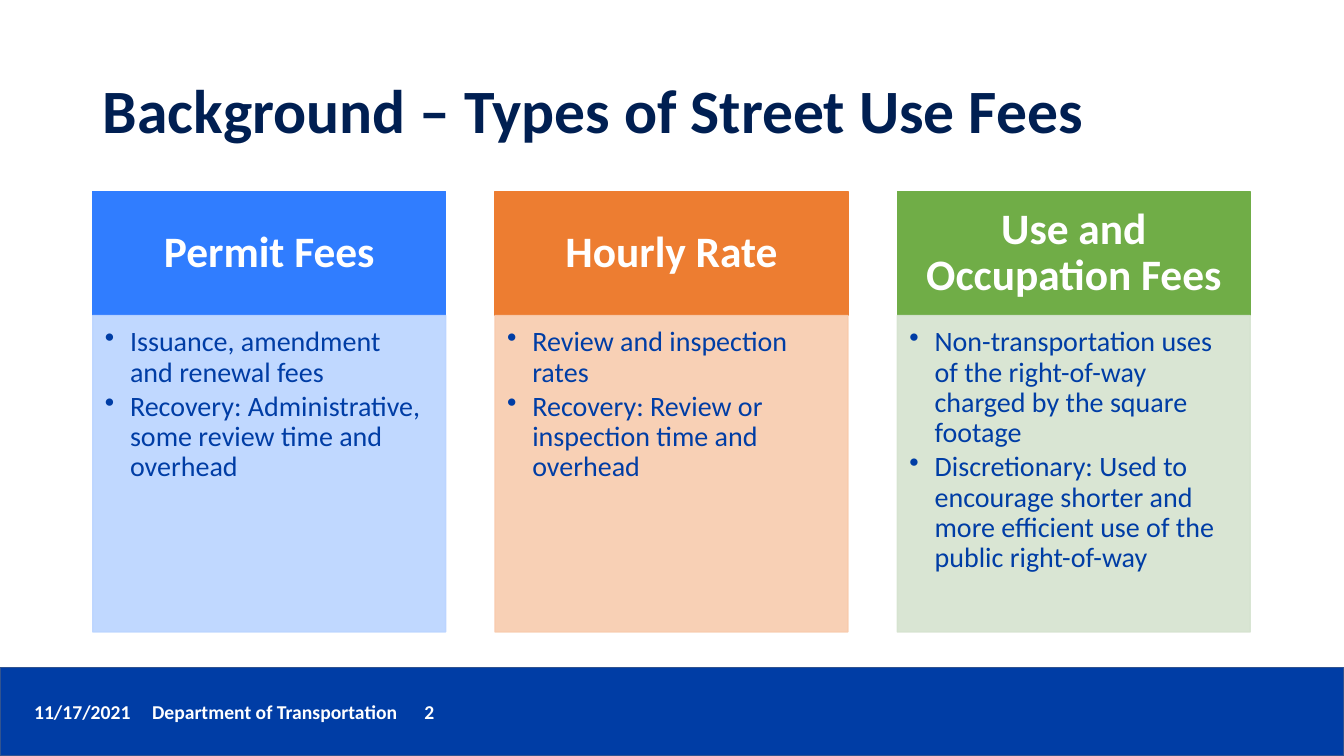
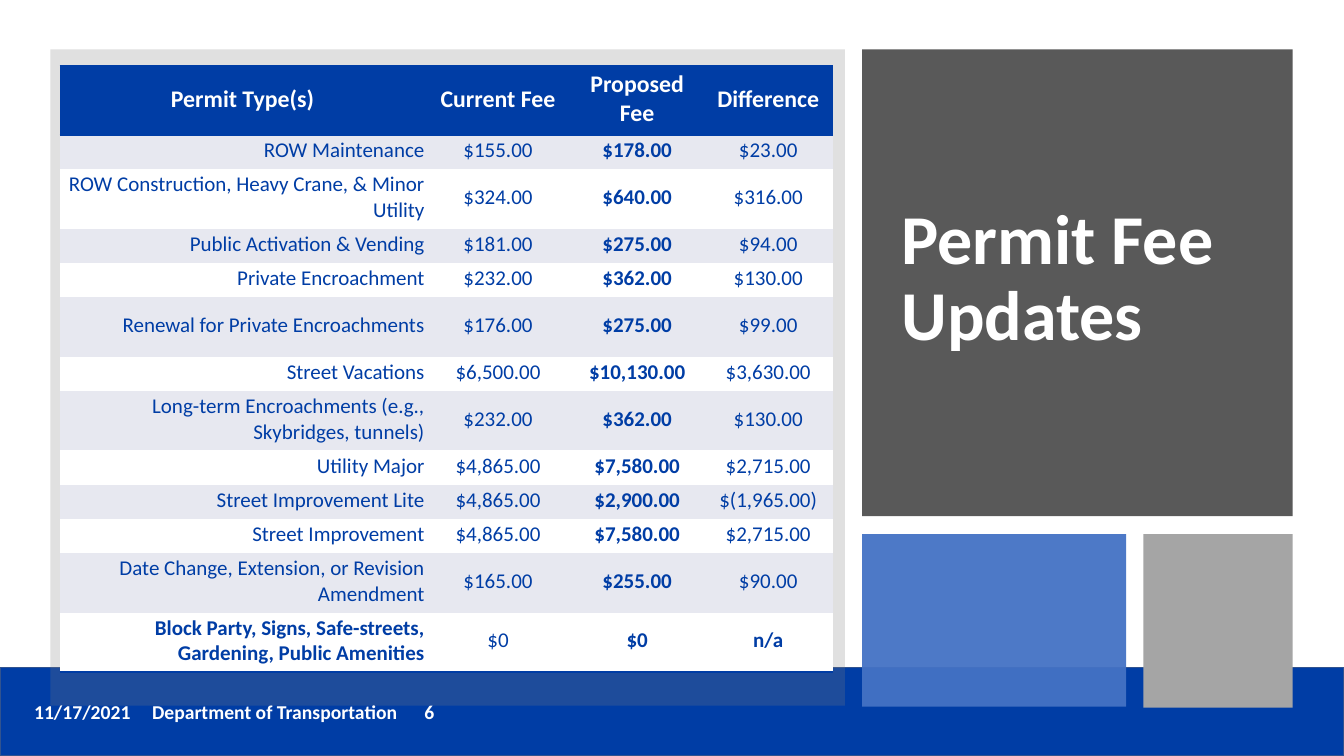
from dataclasses import dataclass
from typing import Optional, Sequence

from lxml.etree import SubElement
from pptx import Presentation
from pptx.dml.color import RGBColor
from pptx.enum.shapes import MSO_SHAPE as Preset
from pptx.enum.text import MSO_ANCHOR as Anchor, MSO_AUTO_SIZE as AutoSize, PP_ALIGN as Align
from pptx.oxml.ns import qn
from pptx.util import Inches, Pt

FONT = "Calibri"
COLORS = {
    "white": "FFFFFF",
    "navy": "001F52",
    "royal": "003DA5",
    "band_line": "31538F",
    "charcoal": "595959",
    "mid_gray": "7F7F7F",
    "light_gray": "A5A5A5",
    "soft_blue": "4472C4",
    "stripe": "E7E8F0",
}
SLIDE_WIDTH, SLIDE_HEIGHT = 13.33, 7.5
PLAIN_TABLE_STYLE = "{2D5ABB26-0587-4C30-8999-92F81FD0307C}"


@dataclass(frozen=True)
class Box:
    left: float
    top: float
    width: float
    height: float

    def lengths(self) -> list:
        return [Inches(v) for v in (self.left, self.top, self.width, self.height)]


@dataclass(frozen=True)
class FeeCard:
    heading: str
    bullets: Sequence[str]
    heading_color: str
    body_color: str


@dataclass(frozen=True)
class Panel:
    box: Box
    color: str
    opacity: int = 100


@dataclass(frozen=True)
class FeeRow:
    permit: str
    current: str
    proposed: str
    difference: str
    tall: bool = False
    emphasized: bool = False


CARDS = [
    FeeCard("Permit Fees",
            ["Issuance, amendment and renewal fees",
             "Recovery: Administrative, some review time and overhead"],
            "307DFF", "BAD4FF"),
    FeeCard("Hourly Rate",
            ["Review and inspection rates",
             "Recovery: Review or inspection time and overhead"],
            "ED7D31", "F8CBAD"),
    FeeCard("Use and Occupation Fees",
            ["Non-transportation uses of the right-of-way charged by the square footage",
             "Discretionary: Used to encourage shorter and more efficient use of the "
             "public right-of-way"],
            "70AD47", "D5E3CF"),
]

PANELS = [
    Panel(Box(0.5, 0.49, 7.88, 6.51), COLORS["mid_gray"], 24),
    Panel(Box(8.55, 0.49, 4.27, 4.63), COLORS["charcoal"]),
    Panel(Box(8.55, 5.3, 2.62, 1.71), COLORS["soft_blue"], 95),
    Panel(Box(11.34, 5.3, 1.48, 1.72), COLORS["light_gray"]),
]

FEE_HEADERS = ["Permit Type(s)", "Current Fee", "Proposed Fee", "Difference"]
FEE_COLUMNS = [3.63, 1.44, 1.32, 1.28]
HEADER_HEIGHT, ROW_HEIGHT, TALL_ROW_HEIGHT = 0.68, 0.34, 0.59
FEE_ROWS = [
    FeeRow("ROW Maintenance", "$155.00", "$178.00", "$23.00"),
    FeeRow("ROW Construction, Heavy Crane, & Minor Utility",
           "$324.00", "$640.00", "$316.00", tall=True),
    FeeRow("Public Activation & Vending", "$181.00", "$275.00", "$94.00"),
    FeeRow("Private Encroachment", "$232.00", "$362.00", "$130.00"),
    FeeRow("Renewal for Private Encroachments", "$176.00", "$275.00", "$99.00", tall=True),
    FeeRow("Street Vacations", "$6,500.00", "$10,130.00", "$3,630.00"),
    FeeRow("Long-term Encroachments (e.g., Skybridges, tunnels)",
           "$232.00", "$362.00", "$130.00", tall=True),
    FeeRow("Utility Major", "$4,865.00", "$7,580.00", "$2,715.00"),
    FeeRow("Street Improvement Lite", "$4,865.00", "$2,900.00", "$(1,965.00)"),
    FeeRow("Street Improvement", "$4,865.00", "$7,580.00", "$2,715.00"),
    FeeRow("Date Change, Extension, or Revision Amendment",
           "$165.00", "$255.00", "$90.00", tall=True),
    FeeRow("Block Party, Signs, Safe-streets, Gardening, Public Amenities",
           "$0", "$0", "n/a", tall=True, emphasized=True),
]


# Shared helpers
def write_text(frame, *texts: str, size: float, color: str, bold: bool = False,
               align=Align.LEFT, anchor=None, margins: Optional[Sequence[float]] = None,
               line_spacing: float = 1.0, space_after: float = 0,
               bullet_indent: float = 0, tabs: Sequence[float] = ()) -> None:
    """Write one paragraph per text; margins run left, top, right, bottom."""
    frame.word_wrap = True
    if anchor is not None:
        frame.vertical_anchor = anchor
    if margins:
        (frame.margin_left, frame.margin_top,
         frame.margin_right, frame.margin_bottom) = map(Inches, margins)
    for index, text in enumerate(texts):
        paragraph = frame.add_paragraph() if index else frame.paragraphs[0]
        properties = paragraph._p.get_or_add_pPr()
        if bullet_indent:
            properties.set("marL", str(Inches(bullet_indent)))
            properties.set("indent", str(-Inches(bullet_indent)))
            SubElement(properties, qn("a:buChar")).set("char", "•")
        if tabs:
            tab_list = SubElement(properties, qn("a:tabLst"))
            for position in tabs:
                tab = SubElement(tab_list, qn("a:tab"))
                tab.set("pos", str(Inches(position)))
                tab.set("algn", "l")
        paragraph.alignment = align
        paragraph.line_spacing = line_spacing
        paragraph.space_before = Pt(0)
        paragraph.space_after = Pt(space_after)
        run = paragraph.add_run()
        run.text = text
        run.font.name = FONT
        run.font.size = Pt(size)
        run.font.bold = bold
        run.font.color.rgb = RGBColor.from_string(color)


def add_rectangle(slide, box: Box, fill: str, line: Optional[str] = None, opacity: int = 100):
    shape = slide.shapes.add_shape(Preset.RECTANGLE, *box.lengths())
    shape.shadow.inherit = False
    shape.fill.solid()
    shape.fill.fore_color.rgb = RGBColor.from_string(fill)
    if line:
        shape.line.color.rgb = RGBColor.from_string(line)
        shape.line.width = Pt(1)
    else:
        shape.line.fill.background()
    if opacity < 100:
        for color in shape.element.iter(qn("a:srgbClr")):
            SubElement(color, qn("a:alpha")).set("val", str(opacity * 1000))
    return shape


def add_titled_slide(presentation, page: int):
    """Add a title-only slide with the footer band."""
    slide = presentation.slides.add_slide(presentation.slide_layouts[5])
    add_rectangle(slide, Box(0, 6.62, SLIDE_WIDTH, 0.88), COLORS["royal"], COLORS["band_line"])
    footer = slide.shapes.add_textbox(*Box(0.24, 6.89, 10.06, 0.34).lengths())
    write_text(footer.text_frame, f"11/17/2021\tDepartment of Transportation\t{page}",
               size=14, color=COLORS["white"], bold=True, tabs=(1.17, 3.87))
    return slide


def place_title(slide, text: str, box: Box, size: float, color: str) -> None:
    title = slide.shapes.title
    title.left, title.top, title.width, title.height = box.lengths()
    title.text_frame.auto_size = AutoSize.NONE
    write_text(title.text_frame, text, size=size, color=color, bold=True,
               anchor=Anchor.MIDDLE, margins=(0.1, 0.05, 0.1, 0.05), line_spacing=0.9)
    # Keep the title in front of the panels
    title.element.getparent().append(title.element)


# Fee type cards
def add_fee_card(slide, card: FeeCard, left: float) -> None:
    top, width, heading_height = 1.9, 3.5, 1.23
    heading = add_rectangle(slide, Box(left, top, width, heading_height),
                            card.heading_color, card.heading_color)
    write_text(heading.text_frame, card.heading, size=31, color=COLORS["white"], bold=True,
               align=Align.CENTER, anchor=Anchor.MIDDLE,
               margins=(0.24, 0.14, 0.24, 0.14), line_spacing=0.9)
    body = add_rectangle(slide, Box(left, top + heading_height, width, 3.14),
                         card.body_color, card.body_color, opacity=90)
    write_text(body.text_frame, *card.bullets, size=20, color=COLORS["royal"],
               anchor=Anchor.TOP, margins=(0.12, 0.12, 0.16, 0.17),
               line_spacing=0.9, space_after=3, bullet_indent=0.25)


def build_fee_types(presentation) -> None:
    slide = add_titled_slide(presentation, 2)
    place_title(slide, "Background – Types of Street Use Fees",
                Box(0.92, 0.4, 11.5, 1.45), 44, COLORS["navy"])
    for index, card in enumerate(CARDS):
        add_fee_card(slide, card, 0.92 + index * 3.99)


# Permit fee table
def add_cell_border(cell, side: str) -> None:
    line = SubElement(cell._tc.get_or_add_tcPr(), qn(f"a:{side}"))
    line.set("w", str(Pt(2)))
    fill = SubElement(line, qn("a:solidFill"))
    SubElement(fill, qn("a:srgbClr")).set("val", COLORS["royal"])


def format_cell(cell, text: str, fill: str, borders: Sequence[str] = (), **text_format) -> None:
    for side in borders:
        add_cell_border(cell, side)
    cell.fill.solid()
    cell.fill.fore_color.rgb = RGBColor.from_string(fill)
    cell.vertical_anchor = Anchor.MIDDLE
    cell.margin_left = cell.margin_top = cell.margin_right = Inches(0.01)
    cell.margin_bottom = Inches(0.04)
    # Keep right-aligned names clear of the next column
    if text_format["align"] == Align.RIGHT:
        cell.margin_right = Inches(0.01)
    write_text(cell.text_frame, text, **text_format)


def add_fee_table(slide) -> None:
    heights = [HEADER_HEIGHT] + [TALL_ROW_HEIGHT if row.tall else ROW_HEIGHT for row in FEE_ROWS]
    box = Box(0.59, 0.66, sum(FEE_COLUMNS), sum(heights))
    frame = slide.shapes.add_table(len(heights), len(FEE_COLUMNS), *box.lengths())
    frame.element.find(".//" + qn("a:tableStyleId")).text = PLAIN_TABLE_STYLE
    table = frame.table
    table.first_row = table.horz_banding = False
    for column, width in zip(table.columns, FEE_COLUMNS):
        column.width = Inches(width)
    for row, height in zip(table.rows, heights):
        row.height = Inches(height)

    for column, header in enumerate(FEE_HEADERS):
        format_cell(table.cell(0, column), header, COLORS["royal"], ("lnT", "lnB"),
                    size=17, color=COLORS["white"], bold=True, align=Align.CENTER)
    for number, row in enumerate(FEE_ROWS, start=1):
        fill = COLORS["stripe"] if number % 2 else COLORS["white"]
        borders = ("lnB",) if number == len(FEE_ROWS) else ()
        values = (row.permit, row.current, row.proposed, row.difference)
        for column, value in enumerate(values):
            bold = column == 2 or (row.emphasized and column != 1)
            format_cell(table.cell(number, column), value, fill, borders,
                        size=15, color=COLORS["royal"], bold=bold,
                        align=Align.CENTER if column else Align.RIGHT)


def build_fee_updates(presentation) -> None:
    slide = add_titled_slide(presentation, 6)
    for panel in PANELS:
        add_rectangle(slide, panel.box, panel.color, opacity=panel.opacity)
    place_title(slide, "Permit Fee Updates", Box(8.84, 1.22, 3.68, 3.11), 50, COLORS["white"])
    add_fee_table(slide)


def main() -> None:
    presentation = Presentation()
    presentation.slide_width = Inches(SLIDE_WIDTH)
    presentation.slide_height = Inches(SLIDE_HEIGHT)
    build_fee_types(presentation)
    build_fee_updates(presentation)
    presentation.save("out.pptx")


if __name__ == "__main__":
    main()
